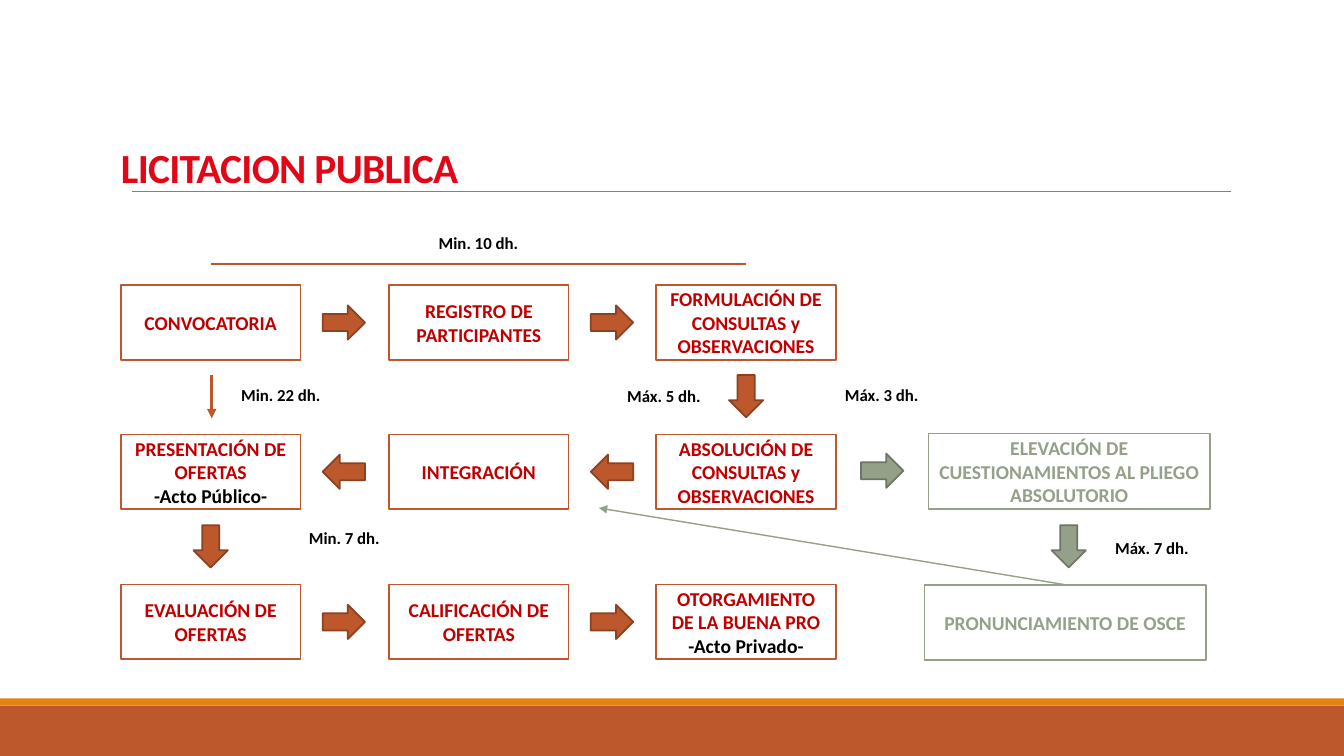
"""Build the slide with the stages of a public tender."""
from dataclasses import dataclass

from lxml.etree import SubElement
from pptx import Presentation
from pptx.dml.color import RGBColor
from pptx.enum.shapes import MSO_CONNECTOR, MSO_SHAPE
from pptx.enum.text import MSO_ANCHOR as Anchor, PP_ALIGN as Align
from pptx.oxml.ns import qn
from pptx.shapes.autoshape import Shape
from pptx.slide import Slide
from pptx.util import Inches, Pt

WHITE = RGBColor(0xFF, 0xFF, 0xFF)
BLACK = RGBColor(0x00, 0x00, 0x00)
RUST = RGBColor(0xBD, 0x58, 0x2C)
DARK_RUST = RGBColor(0x8C, 0x41, 0x21)
ORANGE = RGBColor(0xE4, 0x83, 0x12)
SAGE = RGBColor(0x94, 0xA0, 0x88)
DARK_SAGE = RGBColor(0x6D, 0x76, 0x65)
GRAY = RGBColor(0x80, 0x80, 0x80)
TITLE_RED = RGBColor(0xE1, 0x07, 0x17)
STAGE_RED = RGBColor(0xC0, 0x00, 0x00)

COLUMNS = (1.2, 3.86, 6.51)
ROWS = (2.83, 4.31, 5.8)
STAGE_SIZE = (1.78, 0.74)
REVIEW_SIZE = (2.79, 0.75)
ARROW_SIZE = (0.42, 0.34)
TERM_SIZE = (1.29, 0.42)
TITLE_FONT = {"name": "Calibri", "size": Pt(29.6), "bold": True}
STAGE_FONT = {"name": "Calibri", "size": Pt(14), "bold": True}
TERM_FONT = {"name": "Calibri", "size": Pt(12), "bold": True}
NO_MARGINS = dict.fromkeys(("margin_left", "margin_top", "margin_right", "margin_bottom"), 0)


@dataclass(frozen=True)
class Stage:
    left: float
    top: float
    name: str
    act: str = ""
    size: tuple[float, float] = STAGE_SIZE
    line: RGBColor = RUST
    color: RGBColor = STAGE_RED


@dataclass(frozen=True)
class Arrow:
    left: float
    top: float
    rotation: int = 0
    fill: RGBColor = RUST
    line: RGBColor = DARK_RUST


@dataclass(frozen=True)
class Term:
    left: float
    top: float
    text: str


@dataclass(frozen=True)
class Rule:
    start: tuple[float, float]
    end: tuple[float, float]
    color: RGBColor
    width: float
    arrowhead: bool = False


STAGE_GRID = (
    (("CONVOCATORIA",), ("REGISTRO DE PARTICIPANTES",),
     ("FORMULACIÓN DE CONSULTAS y OBSERVACIONES",)),
    (("PRESENTACIÓN DE OFERTAS", "-Acto Público-"), ("INTEGRACIÓN",),
     ("ABSOLUCIÓN DE CONSULTAS y OBSERVACIONES",)),
    (("EVALUACIÓN DE OFERTAS",), ("CALIFICACIÓN DE OFERTAS",),
     ("OTORGAMIENTO DE LA BUENA PRO", "-Acto Privado-")),
)
STAGES = [
    Stage(left, top, *texts)
    for top, row in zip(ROWS, STAGE_GRID)
    for left, texts in zip(COLUMNS, row)
] + [
    Stage(9.21, 4.3, "ELEVACIÓN DE CUESTIONAMIENTOS AL PLIEGO ABSOLUTORIO",
          size=REVIEW_SIZE, line=SAGE, color=SAGE),
    Stage(9.17, 5.8, "PRONUNCIAMIENTO DE OSCE",
          size=REVIEW_SIZE, line=SAGE, color=SAGE),
]
ARROWS = [
    Arrow(left + 2, top + 0.2, rotation)
    for top, rotation in zip(ROWS, (0, 180, 0))
    for left in COLUMNS[:2]
] + [
    Arrow(1.88, 5.25, 90),
    Arrow(7.19, 3.76, 90),
    Arrow(8.54, 4.5, 0, SAGE, DARK_SAGE),
    Arrow(10.39, 5.25, 90, SAGE, DARK_SAGE),
]
TERMS = (
    Term(2.14, 3.71, "Min. 22 dh."),
    Term(2.77, 5.12, "Min. 7 dh."),
    Term(4.1, 2.2, "Min. 10 dh."),
    Term(5.94, 3.72, "Máx. 5 dh."),
    Term(10.78, 5.22, "Máx. 7 dh."),
    Term(8.1, 3.71, "Máx. 3 dh."),
)
RULES = (
    Rule((1.31, 1.9), (12.21, 1.9), GRAY, 0.5),
    Rule((2.1, 3.72), (2.1, 4.15), RUST, 2.25, True),
    Rule((2.09, 2.62), (7.4, 2.62), RUST, 1.5),
    Rule((10.56, 5.8), (5.94, 5.04), SAGE, 1, True),
)


def apply_format(target: object, values: dict) -> None:
    for name, value in values.items():
        setattr(target, name, value)


def write(shape: Shape, lines: list[tuple[str, RGBColor]], font: dict,
          align: Align = Align.CENTER, anchor: Anchor = Anchor.MIDDLE) -> None:
    frame = shape.text_frame
    apply_format(frame, {"word_wrap": True, "vertical_anchor": anchor})
    for index, (text, color) in enumerate(lines):
        paragraph = frame.add_paragraph() if index else frame.paragraphs[0]
        paragraph.alignment = align
        run = paragraph.add_run()
        run.text = text
        apply_format(run.font, font)
        run.font.color.rgb = color


def add_block(slide: Slide, kind: MSO_SHAPE, left: float, top: float,
              size: tuple[float, float], fill: RGBColor,
              line: RGBColor | None = None) -> Shape:
    block = slide.shapes.add_shape(kind, *map(Inches, (left, top, *size)))
    block.shadow.inherit = False
    block.fill.solid()
    block.fill.fore_color.rgb = fill
    if line is None:
        block.line.fill.background()
    else:
        block.line.color.rgb = line
        block.line.width = Pt(1.25)
    return block


def add_text(slide: Slide, left: float, top: float, size: tuple[float, float]) -> Shape:
    return slide.shapes.add_textbox(*map(Inches, (left, top, *size)))


def add_title(slide: Slide) -> None:
    title = add_text(slide, 1.2, 0.31, (11, 1.59))
    write(title, [("LICITACION PUBLICA", TITLE_RED)], TITLE_FONT, Align.LEFT, Anchor.BOTTOM)
    apply_format(title.text_frame, NO_MARGINS)
    heading = title.text_frame.paragraphs[0]
    heading.line_spacing = 0.85
    heading.runs[0].font._element.set("spc", "-50")


def add_stage(slide: Slide, stage: Stage) -> None:
    box = add_block(slide, MSO_SHAPE.RECTANGLE, stage.left, stage.top, stage.size,
                    WHITE, stage.line)
    lines = [(stage.name, stage.color)]
    if stage.act:
        lines.append((stage.act, BLACK))
    write(box, lines, STAGE_FONT)


def add_arrow(slide: Slide, arrow: Arrow) -> None:
    block = add_block(slide, MSO_SHAPE.RIGHT_ARROW, arrow.left, arrow.top, ARROW_SIZE,
                      arrow.fill, arrow.line)
    block.rotation = arrow.rotation


def add_rule(slide: Slide, rule: Rule) -> None:
    connector = slide.shapes.add_connector(
        MSO_CONNECTOR.STRAIGHT, *map(Inches, rule.start + rule.end))
    connector.line.color.rgb = rule.color
    connector.line.width = Pt(rule.width)
    if rule.arrowhead:
        SubElement(connector.line._get_or_add_ln(), qn("a:tailEnd"), type="triangle")
    SubElement(connector._element.spPr, qn("a:effectLst"))


def main() -> None:
    deck = Presentation()
    deck.slide_width, deck.slide_height = Inches(13.33), Inches(7.5)
    slide = deck.slides.add_slide(deck.slide_layouts[6])
    add_block(slide, MSO_SHAPE.RECTANGLE, 0, 7, (13.33, 0.5), RUST)
    add_block(slide, MSO_SHAPE.RECTANGLE, 0, 6.93, (13.33, 0.07), ORANGE)
    add_title(slide)
    for stage in STAGES:
        add_stage(slide, stage)
    for arrow in ARROWS:
        add_arrow(slide, arrow)
    for rule in RULES:
        add_rule(slide, rule)
    for term in TERMS:
        write(add_text(slide, term.left, term.top, TERM_SIZE), [(term.text, BLACK)], TERM_FONT)
    deck.save("out.pptx")


if __name__ == "__main__":
    main()
